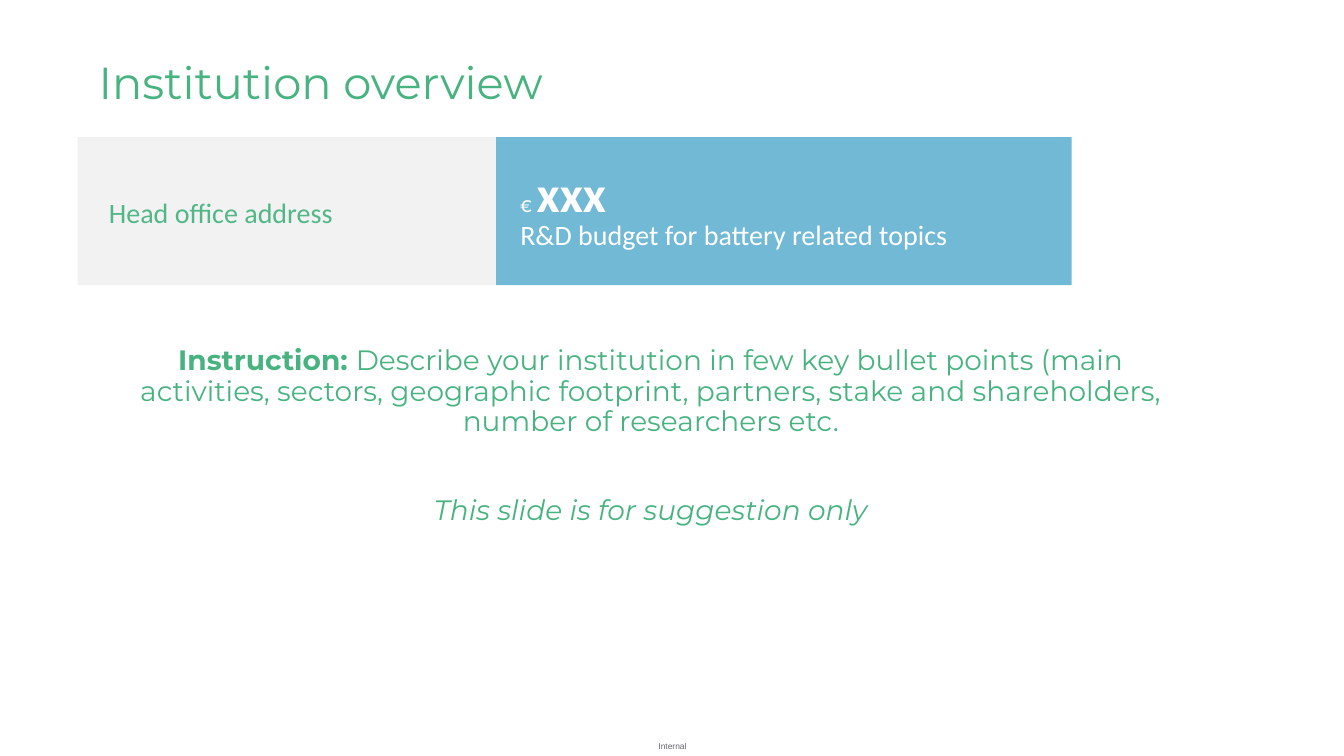
from pptx import Presentation
from pptx.dml.color import RGBColor
from pptx.enum.shapes import MSO_SHAPE
from pptx.enum.text import MSO_ANCHOR, PP_ALIGN
from pptx.util import Inches, Pt

GREEN = "48B381"
WHITE = "FFFFFF"
BAND_TOP, BAND_HEIGHT = 1.36, 1.47
BODY_INSETS = (0.1, 0.05, 0.1, 0.05)


def color(hex_code):
    return RGBColor.from_string(hex_code)


def write(frame, paragraphs, font="Montserrat", size=20, fill=GREEN,
          align=PP_ALIGN.LEFT, anchor=MSO_ANCHOR.MIDDLE, insets=BODY_INSETS,
          spacing=0.9, gap=0, wrap=True):
    """Each paragraph is a list of (text, format) runs."""
    frame.word_wrap = wrap
    frame.vertical_anchor = anchor
    (frame.margin_left, frame.margin_top,
     frame.margin_right, frame.margin_bottom) = map(Inches, insets)
    for index, runs in enumerate(paragraphs):
        paragraph = frame.add_paragraph() if index else frame.paragraphs[0]
        paragraph.alignment = align
        paragraph.line_spacing = spacing
        if index:
            paragraph.space_before = Pt(gap)
        for text, style in runs:
            run = paragraph.add_run()
            run.text = text
            run.font.name = font
            run.font.size = Pt(style.get("size", size))
            run.font.bold = style.get("bold", False)
            run.font.italic = style.get("italic", False)
            run.font.color.rgb = color(fill)


def add_text(slide, left, top, width, height, paragraphs, **style):
    box = slide.shapes.add_textbox(*map(Inches, (left, top, width, height)))
    write(box.text_frame, paragraphs, **style)


def add_panel(slide, left, width, background, paragraphs, **style):
    panel = slide.shapes.add_shape(
        MSO_SHAPE.RECTANGLE,
        *map(Inches, (left, BAND_TOP, width, BAND_HEIGHT)))
    panel.shadow.inherit = False
    panel.fill.solid()
    panel.fill.fore_color.rgb = color(background)
    panel.line.fill.background()
    write(panel.text_frame, paragraphs, font="Calibri", spacing=0.85, **style)


def main():
    deck = Presentation()
    deck.slide_width, deck.slide_height = Inches(13.33), Inches(7.5)
    slide = deck.slides.add_slide(deck.slide_layouts[6])

    # Classification footer
    add_text(slide, 6.42, 7.3, 0.5, 0.2, [[("Internal", {})]],
             font="Arial", size=6, fill="626469", align=PP_ALIGN.CENTER,
             insets=(0, 0, 0, 0), spacing=1)

    # Title
    add_text(slide, 0.88, 0.12, 11.5, 1.45,
             [[("Institution overview", {})]], size=32)

    # Instruction
    add_text(slide, 1.23, 3.39, 10.45, 2.88, [
        [("Instruction: ", {"bold": True}),
         ("Describe your institution in few key bullet points (main "
          "activities, sectors, geographic footprint, partners, stake and "
          "shareholders, number of researchers etc.", {})],
        [("This slide is for suggestion only", {"italic": True})],
    ], align=PP_ALIGN.CENTER, anchor=MSO_ANCHOR.TOP, gap=42)

    # Address and budget band
    add_panel(slide, 0.77, 4.15, "F2F2F2", [[("Head office address", {})]],
              fill="51B787", insets=(0.31, 0.24, 0.16, 0.16), wrap=False)
    add_panel(slide, 4.92, 5.71, "72B9D6", [
        [("€ ", {"size": 16}), ("xxx", {"size": 36, "bold": True})],
        [("R&D budget for battery related topics", {})],
    ], fill=WHITE, insets=(0.24,) * 4)

    deck.save("out.pptx")


if __name__ == "__main__":
    main()
